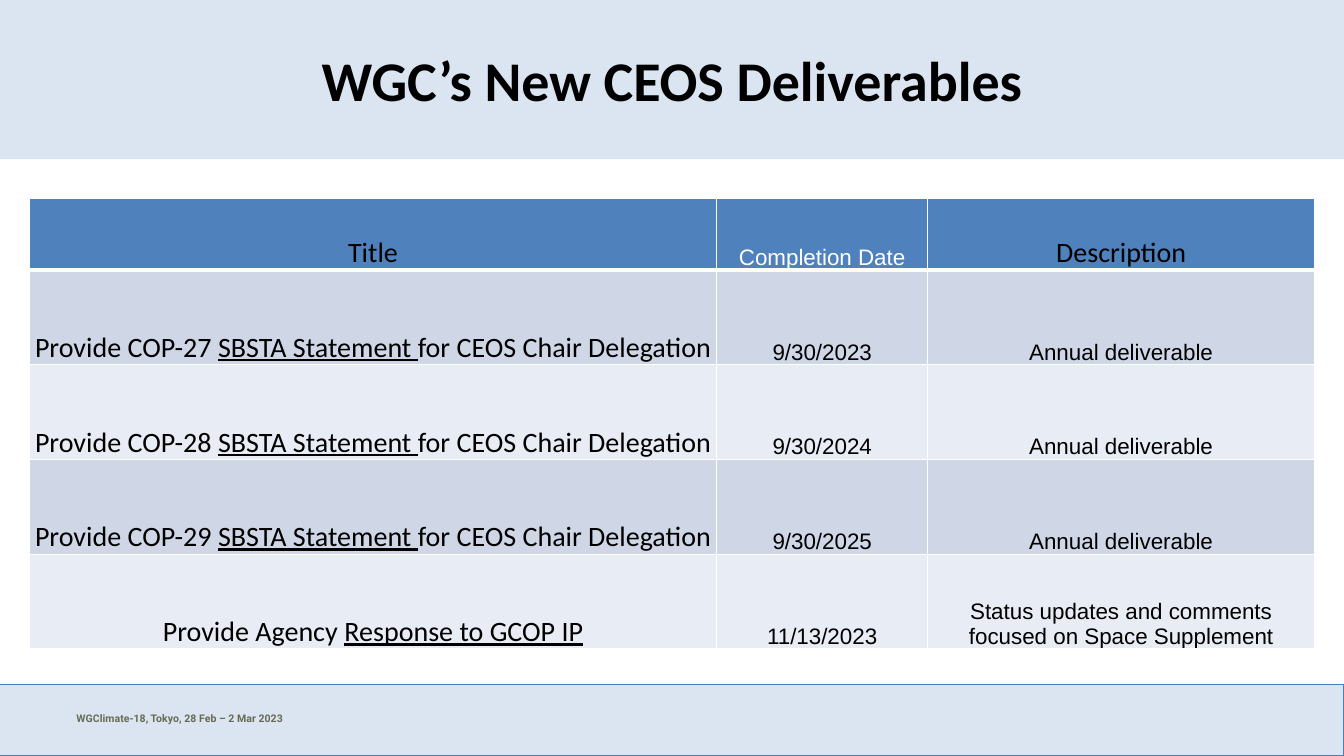
from lxml import etree
from pptx import Presentation
from pptx.dml.color import RGBColor
from pptx.enum.shapes import MSO_SHAPE
from pptx.enum.text import MSO_ANCHOR, PP_ALIGN
from pptx.oxml.ns import qn
from pptx.util import Inches, Pt

RECT = MSO_SHAPE.RECTANGLE
MIDDLE, BOTTOM = MSO_ANCHOR.MIDDLE, MSO_ANCHOR.BOTTOM
LEFT, CENTER = PP_ALIGN.LEFT, PP_ALIGN.CENTER
TITLE_ONLY = 5

COLORS = {
    "band": "DAE5F1", "band_line": "4A7DBA", "footer": "676A55",
    "header": "4F81BD", "odd": "CFD7E7", "even": "E8ECF4",
    "black": "000000", "white": "FFFFFF",
}
COL_WIDTHS = [6.82, 2.09, 3.84]
ROW_HEIGHTS = [0.71] + [0.94] * 4


def statement(number):
    return [f"Provide COP-{number} ", "SBSTA Statement ", "for CEOS Chair Delegation"]


ROWS = [
    (["Title"], "Completion Date", "Description"),
    (statement(27), "9/30/2023", "Annual deliverable"),
    (statement(28), "9/30/2024", "Annual deliverable"),
    (statement(29), "9/30/2025", "Annual deliverable"),
    (["Provide Agency ", "Response to GCOP IP"], "11/13/2023",
     "Status updates and comments focused on Space Supplement"),
]


def rgb(name):
    return RGBColor.from_string(COLORS[name])


def write(tf, parts, size=16, font="Arial", color="black", bold=False, align=CENTER):
    """Write one paragraph; every second part is underlined."""
    p = tf.paragraphs[0]
    p.alignment = align
    for i, text in enumerate(parts):
        r = p.add_run()
        r.text = text
        r.font.size, r.font.name, r.font.bold = Pt(size), font, bold
        r.font.color.rgb = rgb(color)
        if i % 2:
            r.font.underline = True


def set_borders(cell, top, bottom):
    """Draw white cell borders; top and bottom are widths in points."""
    tcPr = cell._tc.get_or_add_tcPr()
    widths = {"a:lnL": 1, "a:lnR": 1, "a:lnT": top, "a:lnB": bottom}
    for i, (tag, width) in enumerate(widths.items()):
        ln = etree.Element(qn(tag), w=str(Pt(width)))
        fill = etree.SubElement(ln, qn("a:solidFill"))
        etree.SubElement(fill, qn("a:srgbClr"), val=COLORS["white"])
        tcPr.insert(i, ln)


class Deck:
    """Holds the presentation and the slide being built."""

    def __init__(self):
        self.prs = Presentation()
        self.prs.slide_width, self.prs.slide_height = Inches(13.33), Inches(7.5)
        self.s = self.prs.slides.add_slide(self.prs.slide_layouts[TITLE_ONLY])

    def band(self, top, height, line=None):
        sp = self.s.shapes.add_shape(RECT, 0, Inches(top), self.prs.slide_width, Inches(height))
        sp.shadow.inherit = False
        sp.fill.solid()
        sp.fill.fore_color.rgb = rgb("band")
        if line:
            sp.line.color.rgb = rgb(line)
            sp.line.width = Pt(0.75)
        else:
            sp.line.fill.background()

    def title(self, text, x, y, w, h):
        sp = self.s.shapes.title
        sp.left, sp.top, sp.width, sp.height = map(Inches, (x, y, w, h))
        sp.text_frame.vertical_anchor = MIDDLE
        write(sp.text_frame, [text], size=40, font="Calibri", bold=True)
        self.s.shapes._spTree.append(sp._element)  # bring in front of the bands

    def text(self, text, x, y, w, h, **fmt):
        sp = self.s.shapes.add_textbox(*map(Inches, (x, y, w, h)))
        sp.text_frame.word_wrap = True
        write(sp.text_frame, [text], **fmt)

    def table(self, x, y):
        frame = self.s.shapes.add_table(
            len(ROWS), len(COL_WIDTHS), Inches(x), Inches(y),
            Inches(sum(COL_WIDTHS)), Inches(sum(ROW_HEIGHTS)))
        table = frame.table
        for col, width in zip(table.columns, COL_WIDTHS):
            col.width = Inches(width)
        for row, height in zip(table.rows, ROW_HEIGHTS):
            row.height = Inches(height)
        for i, (name, date, description) in enumerate(ROWS):
            fill = "header" if i == 0 else "odd" if i % 2 else "even"
            for j, parts in enumerate((name, [date], [description])):
                cell = table.cell(i, j)
                cell.margin_left = cell.margin_right = cell.margin_top = Inches(0.01)
                cell.margin_bottom = 0
                cell.vertical_anchor = BOTTOM
                cell.fill.solid()
                cell.fill.fore_color.rgb = rgb(fill)
                set_borders(cell, top=3 if i == 1 else 1, bottom=3 if i == 0 else 1)
                large = j == 0 or (i == 0 and j == 2)
                write(cell.text_frame, parts,
                      size=20 if large else 16,
                      font="Calibri" if large else "Arial",
                      color="white" if i == 0 and not large else "black")


def main():
    deck = Deck()
    deck.band(6.79, 0.71, line="band_line")
    deck.band(0, 1.58)
    deck.text("WGClimate-18, Tokyo, 28 Feb – 2 Mar 2023", 0.66, 7.01, 8.65, 0.23,
              size=7.5, font="Roboto", color="footer", bold=True, align=LEFT)
    deck.title("WGC’s New CEOS Deliverables", 2.11, 0.16, 9.11, 1.25)
    deck.table(0.29, 1.97)
    deck.prs.save("out.pptx")


if __name__ == "__main__":
    main()
